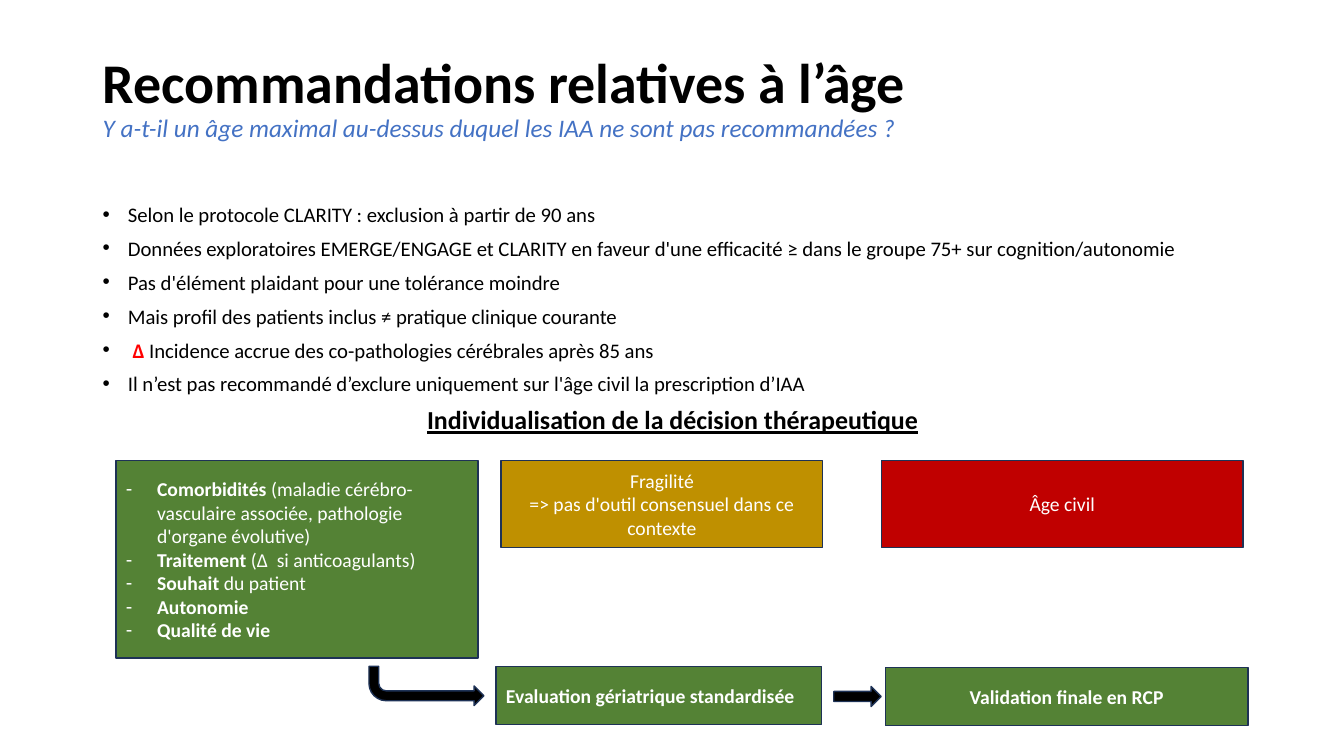
"""Build the slide on age-related recommendations for IAA treatment."""
from lxml import etree
from pptx import Presentation
from pptx.dml.color import RGBColor
from pptx.enum.shapes import MSO_SHAPE
from pptx.enum.text import MSO_ANCHOR, PP_ALIGN
from pptx.oxml.ns import qn
from pptx.util import Inches, Pt

RECTANGLE = MSO_SHAPE.RECTANGLE
BENT_ARROW = MSO_SHAPE.BENT_ARROW
RIGHT_ARROW = MSO_SHAPE.RIGHT_ARROW
MIDDLE = MSO_ANCHOR.MIDDLE
TOP = MSO_ANCHOR.TOP
LEFT = PP_ALIGN.LEFT
CENTER = PP_ALIGN.CENTER

BLACK = RGBColor(0x00, 0x00, 0x00)
WHITE = RGBColor(0xFF, 0xFF, 0xFF)
BLUE = RGBColor(0x44, 0x72, 0xC4)
RED = RGBColor(0xFF, 0x00, 0x00)
GREEN = RGBColor(0x54, 0x82, 0x35)
GOLD = RGBColor(0xBF, 0x90, 0x00)
DARK_RED = RGBColor(0xC0, 0x00, 0x00)
NAVY = RGBColor(0x1E, 0x32, 0x56)

BOLD = {"bold": True}
HEADING = {"size": Pt(40), "bold": True}
QUESTION = {"size": Pt(18), "italic": True}
STATEMENT = {"size": Pt(14.8)}
CONCLUSION = {"size": Pt(18.5), "bold": True, "underline": True}
LABEL = {"size": Pt(14)}
STRONG_LABEL = LABEL | BOLD

BODY_SPACING = {"line_spacing": 0.8, "space_before": Pt(10)}

FINDINGS = [
    [("Selon le protocole CLARITY : exclusion à partir de 90 ans", STATEMENT, BLACK)],
    [("Données exploratoires EMERGE/ENGAGE et CLARITY en faveur d'une efficacité ≥ "
      "dans le groupe 75+ sur cognition/autonomie", STATEMENT, BLACK)],
    [("Pas d'élément plaidant pour une tolérance moindre", STATEMENT, BLACK)],
    [("Mais profil des patients inclus ≠ pratique clinique courante", STATEMENT, BLACK)],
    [(" ", STATEMENT, BLACK), ("Δ", STATEMENT | BOLD, RED),
     (" Incidence accrue des co-pathologies cérébrales après 85 ans", STATEMENT, BLACK)],
    [("Il n’est pas recommandé d’exclure uniquement sur l'âge civil "
      "la prescription d’IAA", STATEMENT, BLACK)],
]

CRITERIA = [
    ("Comorbidités", " (maladie cérébro-vasculaire associée, pathologie d'organe évolutive)"),
    ("Traitement ", "(Δ  si anticoagulants)"),
    ("Souhait ", "du patient"),
    ("Autonomie", ""),
    ("Qualité de vie", ""),
]


def add_run(paragraph, text, formats, color):
    """Append one formatted run to a paragraph."""
    run = paragraph.add_run()
    run.text = text
    run.font.name = "Calibri"
    run.font.color.rgb = color
    for name, value in formats.items():
        setattr(run.font, name, value)


def add_bullet(paragraph, mark, indent):
    """Give a paragraph a hanging bullet."""
    properties = paragraph._p.get_or_add_pPr()
    properties.set("marL", str(Inches(indent)))
    properties.set("indent", str(-Inches(indent)))
    etree.SubElement(properties, qn("a:buFont")).set("typeface", "Arial")
    etree.SubElement(properties, qn("a:buChar")).set("char", mark)


def write_paragraph(frame, runs, align=LEFT, spacing=None, bullet=None):
    """Write runs into the next free paragraph of a text frame."""
    first = frame.paragraphs[0]
    paragraph = frame.add_paragraph() if first.runs else first
    paragraph.alignment = align
    for name, value in (spacing or {}).items():
        setattr(paragraph, name, value)
    for text, formats, color in runs:
        add_run(paragraph, text, formats, color)
    if bullet:
        add_bullet(paragraph, *bullet)
    return paragraph


def add_text_area(slide, place, anchor):
    """Add a wrapping text box and return its frame."""
    frame = slide.shapes.add_textbox(*map(Inches, place)).text_frame
    frame.word_wrap = True
    frame.vertical_anchor = anchor
    return frame


def add_block(slide, preset, place, fill):
    """Add a filled, navy-edged preset shape."""
    block = slide.shapes.add_shape(preset, *map(Inches, place))
    block.shadow.inherit = False
    block.fill.solid()
    block.fill.fore_color.rgb = fill
    block.line.color.rgb = NAVY
    block.line.width = Pt(1)
    block.text_frame.vertical_anchor = MIDDLE
    return block


def add_label_box(slide, place, fill, lines, formats=LABEL, align=CENTER):
    """Add a coloured rectangle with one paragraph per line."""
    frame = add_block(slide, RECTANGLE, place, fill).text_frame
    for line in lines:
        write_paragraph(frame, [(line, formats, WHITE)], align)


def add_title(slide):
    """Add the heading and the question under it."""
    frame = add_text_area(slide, (0.92, 0.4, 11.5, 1.45), MIDDLE)
    frame.margin_bottom = Inches(0.33)
    heading = write_paragraph(frame, [("Recommandations relatives à l’âge", HEADING, BLACK)],
                              spacing={"line_spacing": 0.9})
    heading.add_line_break()
    add_run(heading, "Y a-t-il un âge maximal au-dessus duquel les IAA ne sont pas "
            "recommandées ?", QUESTION, BLUE)


def add_findings(slide):
    """Add the bulleted findings and their conclusion."""
    frame = add_text_area(slide, (0.92, 2, 11.5, 2.52), TOP)
    for runs in FINDINGS:
        write_paragraph(frame, runs, spacing=BODY_SPACING, bullet=("•", 0.25))
    conclusion = "Individualisation de la décision thérapeutique"
    write_paragraph(frame, [(conclusion, CONCLUSION, BLACK)], CENTER, BODY_SPACING)


def add_criteria(slide):
    """Add the green box listing the patient criteria."""
    frame = add_block(slide, RECTANGLE, (1.15, 4.57, 3.59, 1.96), GREEN).text_frame
    for criterion, detail in CRITERIA:
        runs = [(criterion, STRONG_LABEL, WHITE)]
        if detail:
            runs.append((detail, LABEL, WHITE))
        write_paragraph(frame, runs, bullet=("-", 0.31))


def main():
    """Build and save the slide."""
    deck = Presentation()
    deck.slide_width, deck.slide_height = Inches(13.33), Inches(7.5)
    slide = deck.slides.add_slide(deck.slide_layouts[6])

    add_title(slide)
    add_findings(slide)
    add_criteria(slide)
    add_label_box(slide, (4.97, 4.57, 3.19, 0.86), GOLD,
                  ["Fragilité", "=> pas d'outil consensuel dans ce contexte"])
    add_label_box(slide, (8.74, 4.57, 3.59, 0.86), DARK_RED, ["Âge civil"])

    to_evaluation = add_block(slide, BENT_ARROW, (3.66, 6.61, 1.14, 0.39), BLACK)
    to_evaluation.rotation = 180
    to_evaluation._element.spPr.xfrm.set("flipH", "1")
    add_label_box(slide, (4.92, 6.61, 3.23, 0.58), GREEN,
                  ["Evaluation gériatrique standardisée"], STRONG_LABEL, LEFT)
    add_block(slide, RIGHT_ARROW, (8.27, 6.81, 0.47, 0.2), BLACK)
    add_label_box(slide, (8.78, 6.62, 3.6, 0.58), GREEN,
                  ["Validation finale en RCP"], STRONG_LABEL)

    deck.save("out.pptx")


if __name__ == "__main__":
    main()
